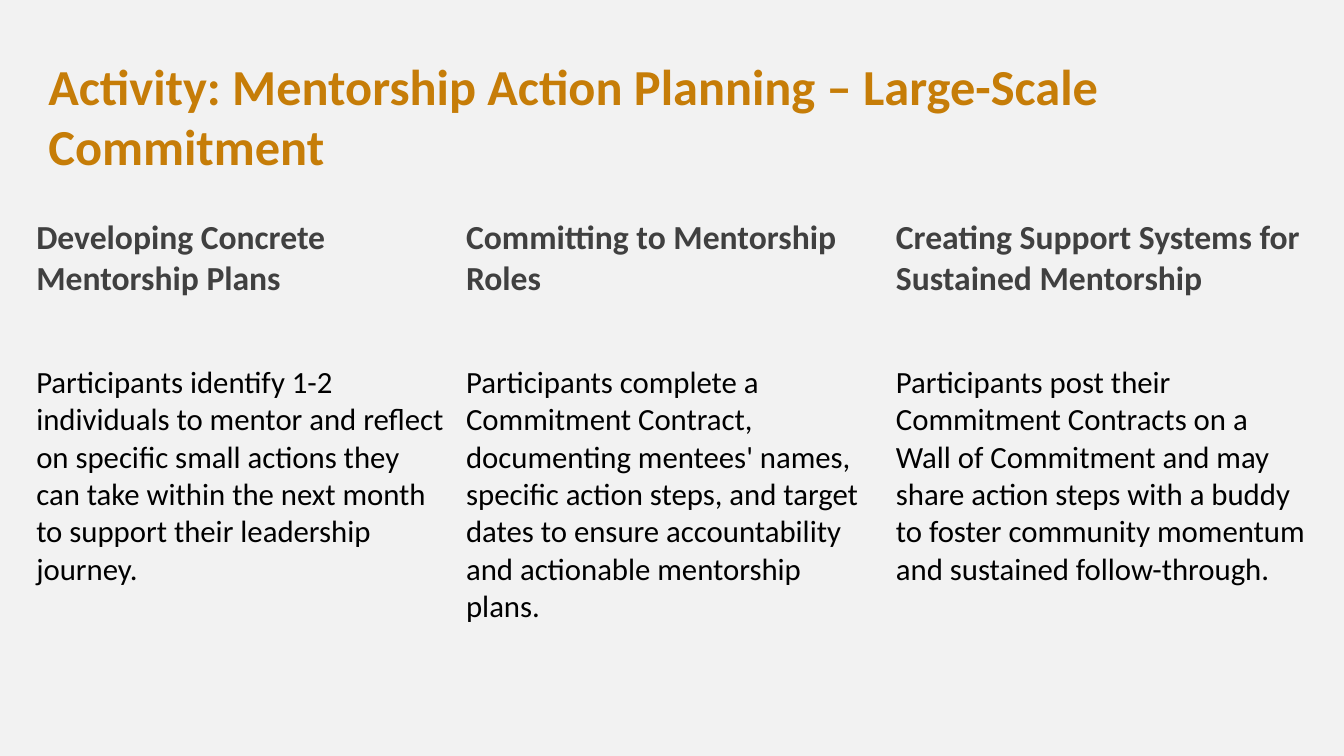
import dataclasses

import pptx
import pptx.dml.color
import pptx.enum.text
import pptx.oxml.ns
import pptx.util


@dataclasses.dataclass(frozen=True)
class Theme:
    """Colours, type sizes and font of the deck."""
    background: str = "F2F2F2"
    title: str = "C67D08"
    heading: str = "404040"
    body: str = "000000"
    title_size: int = 36
    heading_size: int = 24
    body_size: int = 22
    font: str = "Calibri"


THEME = Theme()
PAGE_SIZE = (13.33, 7.5)
TITLE_BOX = (0.38, 0.49, 12.68, 1.31)
TABLE_BOX = (0.26, 2.11, 12.79, 4.37)
ROW_HEIGHTS = (1.45, 2.43)
PLAIN_TABLE_STYLE = "{2D5ABB26-0587-4C30-8999-92F81FD0307C}"
TITLE = "Activity: Mentorship Action Planning – Large-Scale Commitment"
STEPS = (
    ("Developing Concrete Mentorship Plans",
     "Participants identify 1-2 individuals to mentor and reflect on specific small "
     "actions they can take within the next month to support their leadership journey."),
    ("Committing to Mentorship Roles",
     "Participants complete a Commitment Contract, documenting mentees' names, specific "
     "action steps, and target dates to ensure accountability and actionable mentorship plans."),
    ("Creating Support Systems for Sustained Mentorship",
     "Participants post their Commitment Contracts on a Wall of Commitment and may share "
     "action steps with a buddy to foster community momentum and sustained follow-through."),
)


def write_text(frame, text, *, size, color, bold=False):
    """Write one left-aligned paragraph into a text frame."""
    frame.word_wrap = True
    para = frame.paragraphs[0]
    para.alignment = pptx.enum.text.PP_ALIGN.LEFT
    span = para.add_run()
    span.text = text
    span.font.name = THEME.font
    span.font.size = pptx.util.Pt(size)
    span.font.bold = bold
    span.font.color.rgb = pptx.dml.color.RGBColor.from_string(color)


def place_title(page, box):
    """Move the title placeholder into the box and fill it."""
    title = page.shapes.title
    title.left, title.top, title.width, title.height = map(pptx.util.Inches, box)
    title.text_frame.vertical_anchor = pptx.enum.text.MSO_ANCHOR.MIDDLE
    write_text(title.text_frame, TITLE, size=THEME.title_size, color=THEME.title, bold=True)


def place_steps(page, box):
    """Draw the steps as equal columns of an unruled table in the box."""
    left, top, width, height = map(pptx.util.Inches, box)
    holder = page.shapes.add_table(len(ROW_HEIGHTS), len(STEPS), left, top, width, height)
    table = holder.table
    table.first_row = table.horz_banding = False
    style = holder._element.find(".//" + pptx.oxml.ns.qn("a:tableStyleId"))
    style.text = PLAIN_TABLE_STYLE
    for row, row_height in zip(table.rows, ROW_HEIGHTS):
        row.height = pptx.util.Inches(row_height)
    holder.height = height
    formats = (
        dict(size=THEME.heading_size, color=THEME.heading, bold=True),
        dict(size=THEME.body_size, color=THEME.body),
    )
    for column, step in enumerate(STEPS):
        for row, (text, style_options) in enumerate(zip(step, formats)):
            cell = table.cell(row, column)
            cell.fill.background()
            write_text(cell.text_frame, text, **style_options)


def build_activity_page(deck):
    """Add the activity page with its title and steps."""
    page = deck.slides.add_slide(deck.slide_layouts.get_by_name("Title Only"))
    fill = page.background.fill
    fill.solid()
    fill.fore_color.rgb = pptx.dml.color.RGBColor.from_string(THEME.background)
    place_title(page, TITLE_BOX)
    place_steps(page, TABLE_BOX)


def main():
    """Build and save the deck."""
    deck = pptx.Presentation()
    deck.slide_width, deck.slide_height = map(pptx.util.Inches, PAGE_SIZE)
    build_activity_page(deck)
    deck.save("out.pptx")


if __name__ == "__main__":
    main()
